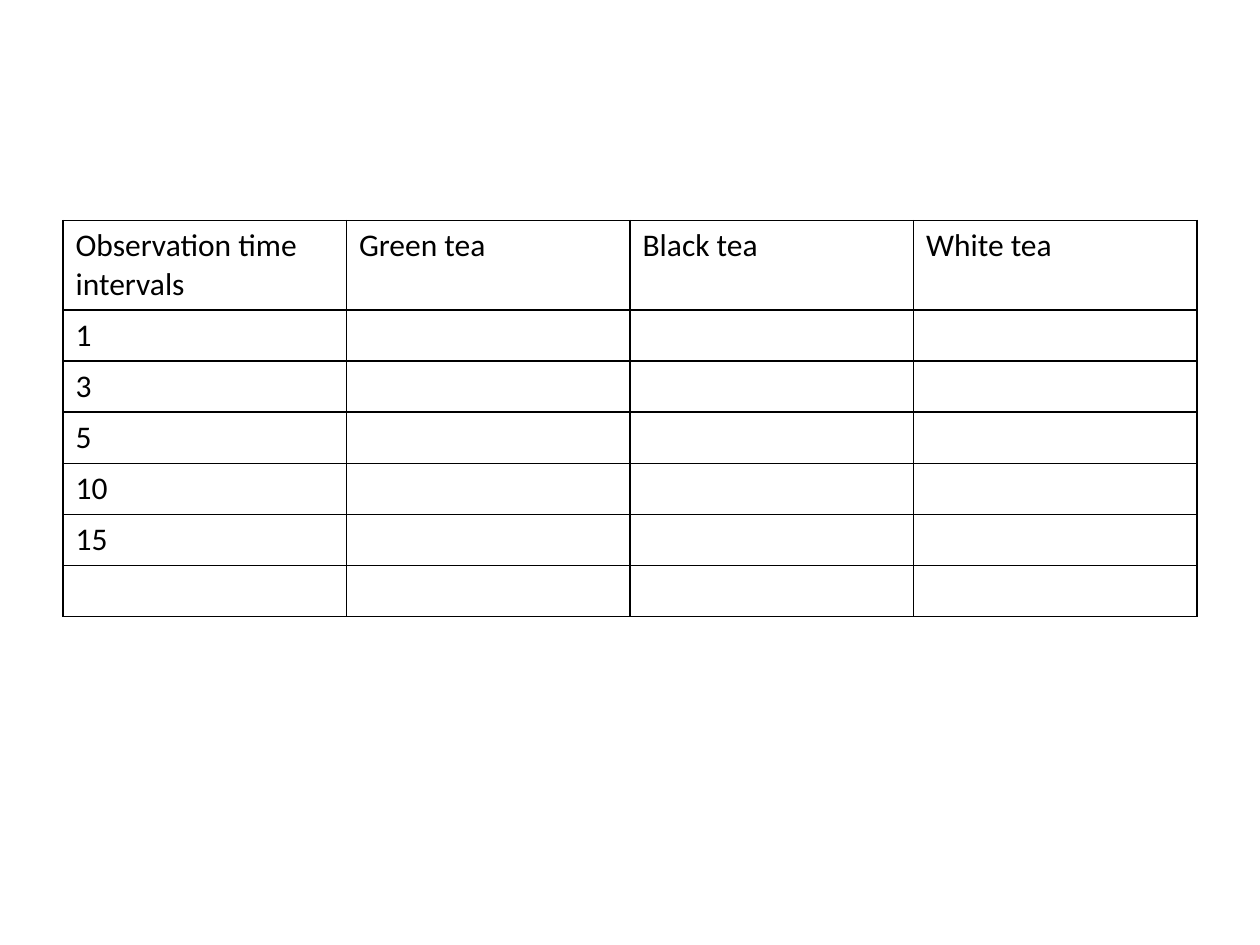
"""Build a slide with an empty observation table for three kinds of tea."""
from dataclasses import dataclass

from lxml import etree
from pptx import Presentation
from pptx.dml.color import RGBColor
from pptx.oxml.ns import qn
from pptx.util import Inches, Pt

BLACK = "000000"
SIDES = ("a:lnL", "a:lnR", "a:lnT", "a:lnB")
FORMAT = {"name": "Calibri", "size": Pt(18), "bold": False}
HEADS = ("Observation time intervals", "Green tea", "Black tea", "White tea")
TIMES = ("1", "3", "5", "10", "15", "")


@dataclass(frozen=True)
class Grid:
    left: float
    top: float
    width: float
    height: float
    head: float


def color(code: str) -> RGBColor:
    return RGBColor.from_string(code)


def border(cell, code: str, width: float) -> None:
    props = cell._tc.get_or_add_tcPr()
    for spot, side in enumerate(SIDES):
        line = etree.Element(qn(side), w=str(Pt(width)))
        fill = etree.SubElement(line, qn("a:solidFill"))
        etree.SubElement(fill, qn("a:srgbClr"), val=code)
        props.insert(spot, line)


def write(cell, text: str) -> None:
    cell.text = text
    cell.fill.background()
    font = cell.text_frame.paragraphs[0].font
    for key, value in FORMAT.items():
        setattr(font, key, value)
    font.color.rgb = color(BLACK)
    border(cell, BLACK, 1)


def draw(slide, grid: Grid, rows: list[tuple[str, ...]]) -> None:
    box = [Inches(n) for n in (grid.left, grid.top, grid.width, grid.height)]
    table = slide.shapes.add_table(len(rows), len(rows[0]), *box).table
    table.first_row = table.horz_banding = False
    body = (grid.height - grid.head) / (len(rows) - 1)
    for y, texts in enumerate(rows):
        table.rows[y].height = Inches(body if y else grid.head)
        for x, text in enumerate(texts):
            write(table.cell(y, x), text)


def main() -> None:
    deck = Presentation()
    deck.slide_width, deck.slide_height = Inches(10), Inches(7.5)
    slide = deck.slides.add_slide(deck.slide_layouts[6])
    blanks = ("",) * (len(HEADS) - 1)
    rows = [HEADS] + [(time, *blanks) for time in TIMES]
    draw(slide, Grid(0.5, 1.75, 9, 3.13, 0.7), rows)
    deck.save("out.pptx")


if __name__ == "__main__":
    main()
